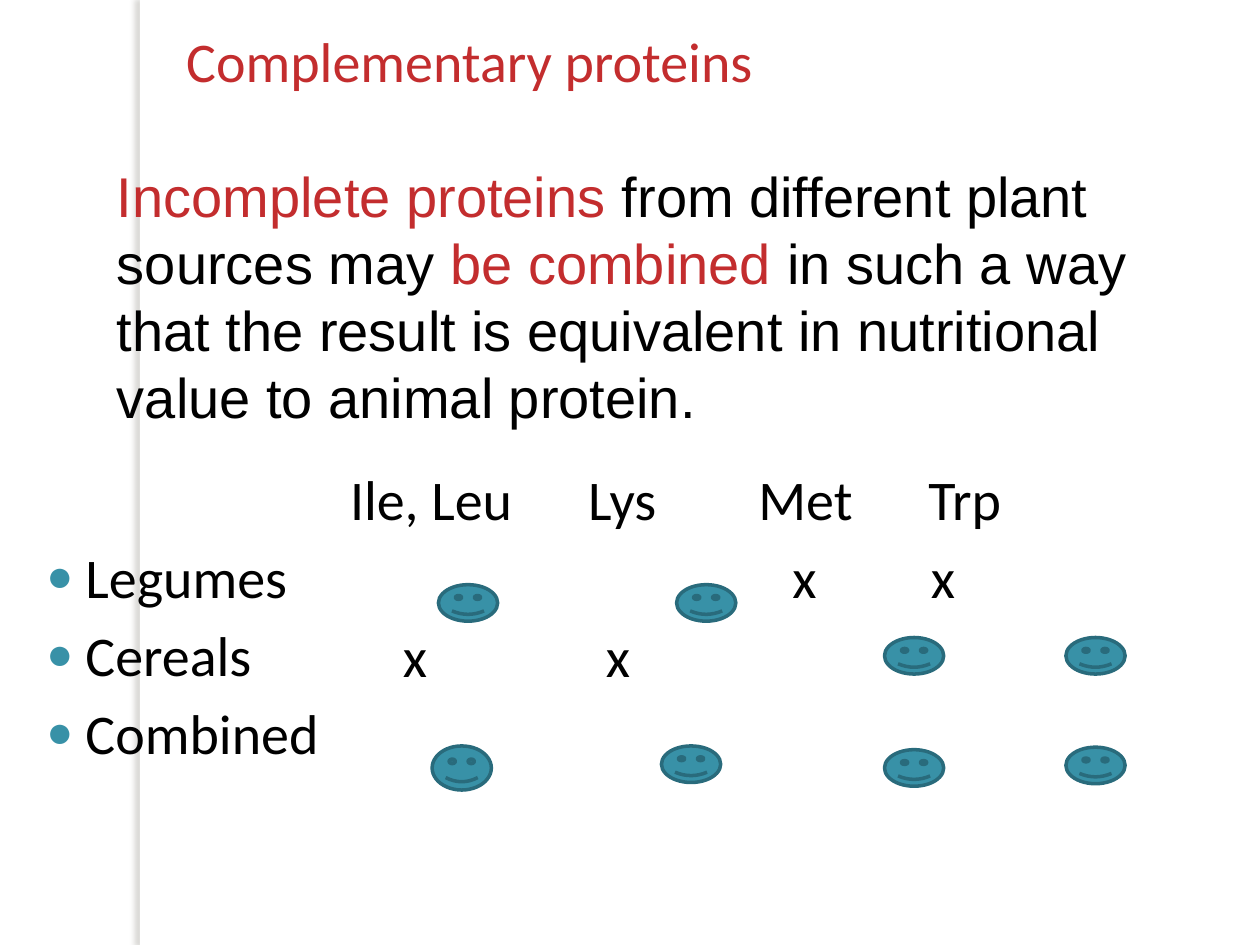
from lxml.etree import SubElement
from pptx import Presentation
from pptx.dml.color import RGBColor
from pptx.enum.shapes import MSO_SHAPE as Shape
from pptx.oxml.ns import qn
from pptx.util import Inches, Pt

RED, BLACK, WHITE = "C32D2E", "000000", "FFFFFF"
TEAL, DARK_TEAL, SHADOW = "3891A7", "296B7C", "736F63"
ROW_TOP, ROW_STEP = 3.64, 0.62
LABELS = ["Legumes", "Cereals", "Combined"]
CELLS = [
    [(2.78, "Ile, Leu"), (4.67, "Lys"), (6.02, "Met"), (7.37, "Trp")],
    [(6.29, "x"), (7.39, "x")],
    [(3.2, "x"), (4.81, "x")],
]
SMILEYS = [
    (3.48, 4.64, 0.29), (5.37, 4.64, 0.29),
    (7.02, 5.06, 0.29), (8.46, 5.06, 0.29),
    (3.43, 5.92, 0.35), (5.25, 5.92, 0.29),
    (7.02, 5.95, 0.29), (8.46, 5.93, 0.29),
]


def rgb(value):
    return RGBColor.from_string(value)


def add_run(p, text, color=BLACK, font="Calibri"):
    r = p.add_run()
    r.text = text
    r.font.size = Pt(32)
    r.font.name = font
    r.font.color.rgb = rgb(color)


def add_box(s, left, top, width, height, wrap=True):
    sp = s.shapes.add_textbox(*map(Inches, (left, top, width, height)))
    sp.text_frame.word_wrap = wrap
    return sp.text_frame


def add_bullet(p):
    pPr = p._p.get_or_add_pPr()
    pPr.set("marL", str(Inches(0.4)))
    pPr.set("indent", str(Inches(-0.31)))
    color = SubElement(pPr, qn("a:buClr"))
    SubElement(color, qn("a:srgbClr"), val=TEAL)
    SubElement(pPr, qn("a:buSzPct"), val="80000")
    SubElement(pPr, qn("a:buFont"), typeface="Arial")
    SubElement(pPr, qn("a:buChar"), char="●")


def add_list(s, labels):
    tf = add_box(s, 0.18, ROW_TOP + ROW_STEP, 2.6, 2)
    for i, label in enumerate(labels):
        p = tf.paragraphs[0] if i == 0 else tf.add_paragraph()
        if i:
            p.space_before = Pt(6)
        add_bullet(p)
        add_run(p, label)


def add_cells(s, rows):
    for i, row in enumerate(rows):
        for left, text in row:
            width = 0.5 + 0.17 * len(text)
            tf = add_box(s, left - 0.1, ROW_TOP + i * ROW_STEP, width, 0.64, wrap=False)
            add_run(tf.paragraphs[0], text)


def add_shape(s, kind, left, top, width, height, fill):
    sp = s.shapes.add_shape(kind, *map(Inches, (left, top, width, height)))
    sp.shadow.inherit = False
    sp.fill.solid()
    sp.fill.fore_color.rgb = rgb(fill)
    return sp


def add_side_strip(s):
    sp = add_shape(s, Shape.RECTANGLE, 1.11, 0, 0.08, 7.5, WHITE)
    sp.line.fill.background()
    effects = sp._element.spPr.find(qn("a:effectLst"))
    shadow = SubElement(effects, qn("a:outerShdw"), blurRad=str(Pt(3)),
                        dist=str(Pt(3)), dir="10800000", rotWithShape="0")
    color = SubElement(shadow, qn("a:srgbClr"), val=SHADOW)
    SubElement(color, qn("a:alpha"), val="25000")


def add_smiley(s, left, top, height):
    sp = add_shape(s, Shape.SMILEY_FACE, left, top, 0.47, height, TEAL)
    sp.line.color.rgb = rgb(DARK_TEAL)
    sp.line.width = Pt(2)


def main():
    prs = Presentation()
    prs.slide_width, prs.slide_height = Inches(10), Inches(7.5)
    s = prs.slides.add_slide(prs.slide_layouts[6])
    add_side_strip(s)

    p = add_box(s, 0.83, 1.23, 8.58, 2.26).paragraphs[0]
    for text, color in [
        ("Incomplete proteins ", RED),
        ("from different plant sources may ", BLACK),
        ("be combined ", RED),
        ("in such a way that the result is equivalent in nutritional value to animal protein.", BLACK),
    ]:
        add_run(p, text, color, "Arial")

    title = add_box(s, 1.38, 0.16, 6.77, 1.25)
    add_run(title.paragraphs[0], "Complementary proteins", RED)

    add_list(s, LABELS)
    add_cells(s, CELLS)
    for left, top, height in SMILEYS:
        add_smiley(s, left, top, height)
    prs.save("out.pptx")


if __name__ == "__main__":
    main()
